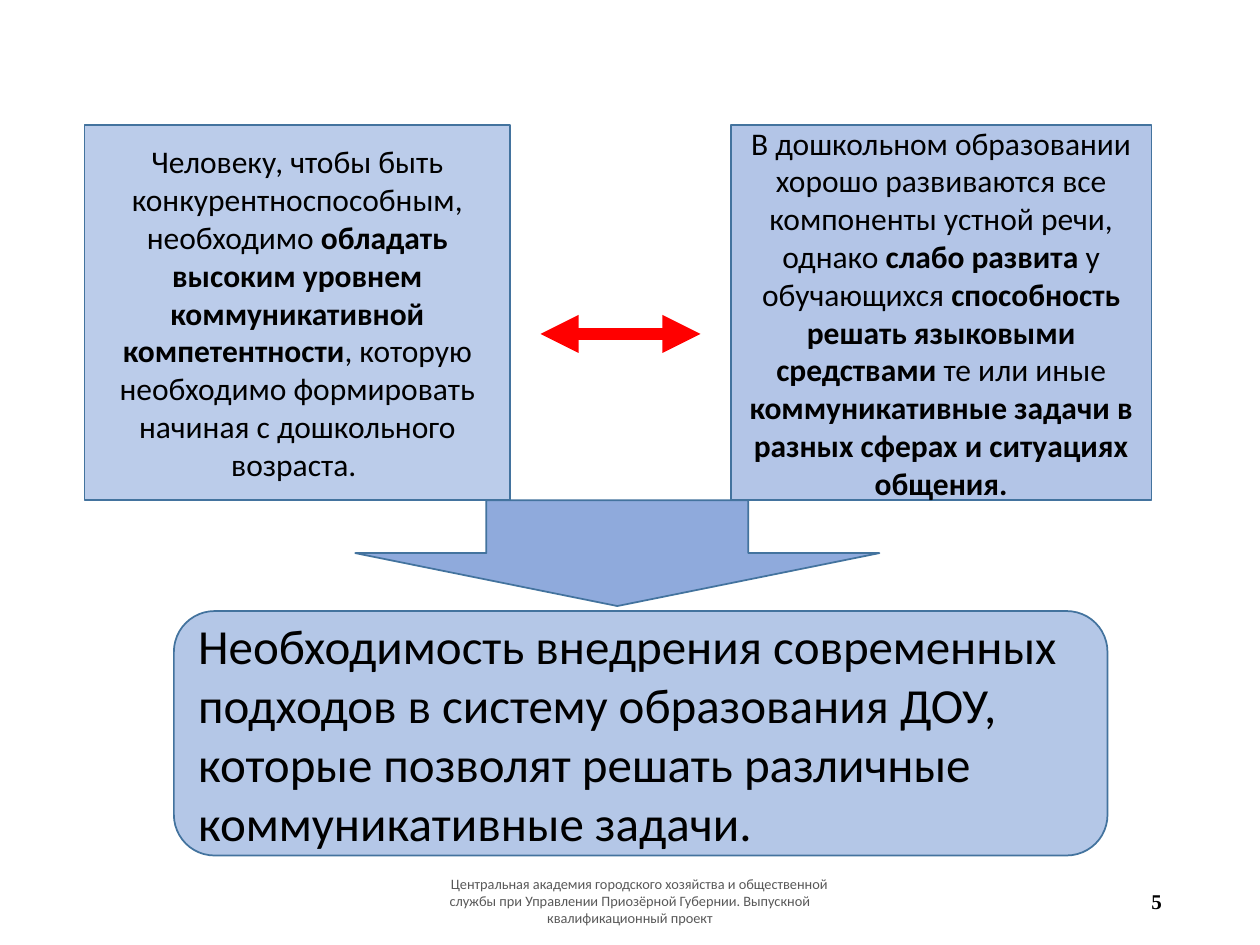
from dataclasses import dataclass

from lxml.etree import SubElement
from pptx import Presentation
from pptx.dml.color import RGBColor
from pptx.enum.shapes import MSO_CONNECTOR, MSO_SHAPE
from pptx.enum.text import MSO_ANCHOR, PP_ALIGN
from pptx.oxml.ns import qn
from pptx.util import Emu, Pt

SCALE = 9144  # EMU per px, 100 px to the inch
COLORS = {
    "blue": "8FAADC",
    "pale_blue": "B4C7E7",
    "outline": "43739E",
    "red": "FF0000",
    "black": "000000",
    "gray": "595959",
}


@dataclass
class TextFormat:
    size: float
    color: str = "black"
    font: str = "Calibri"
    bold: bool = False
    align: PP_ALIGN = PP_ALIGN.CENTER
    indent: int = 0


@dataclass
class Block:
    box: tuple[int, int, int, int]
    kind: MSO_SHAPE
    fill: str
    opacity: int = 100
    runs: tuple[str, ...] = ()  # regular and bold runs take turns
    text_format: TextFormat | None = None


@dataclass
class Label:
    box: tuple[int, int, int, int]
    text: str
    text_format: TextFormat


def px(value: int) -> Emu:
    return Emu(value * SCALE)


def rgb(name: str) -> RGBColor:
    return RGBColor.from_string(COLORS[name])


def write_text(shape, runs: tuple[str, ...], style: TextFormat) -> None:
    frame = shape.text_frame
    frame.word_wrap = True
    frame.vertical_anchor = MSO_ANCHOR.MIDDLE
    paragraph = frame.paragraphs[0]
    paragraph.alignment = style.align
    if style.indent:
        paragraph._p.get_or_add_pPr().set("indent", str(px(style.indent)))
    for index, text in enumerate(runs):
        run = paragraph.add_run()
        run.text = text
        values = {
            "name": style.font,
            "size": Pt(style.size),
            "bold": style.bold or index % 2 == 1,
        }
        for attribute, value in values.items():
            setattr(run.font, attribute, value)
        run.font.color.rgb = rgb(style.color)


def draw_block(slide, block: Block) -> None:
    shape = slide.shapes.add_shape(block.kind, *map(px, block.box))
    shape.shadow.inherit = False
    shape.fill.solid()
    shape.fill.fore_color.rgb = rgb(block.fill)
    if block.opacity < 100:
        color = shape._element.spPr.find(qn("a:solidFill"))[0]
        SubElement(color, qn("a:alpha")).set("val", str(block.opacity * 1000))
    shape.line.color.rgb = rgb("outline")
    shape.line.width = Pt(1)
    if block.text_format:
        write_text(shape, block.runs, block.text_format)


def draw_label(slide, label: Label) -> None:
    shape = slide.shapes.add_textbox(*map(px, label.box))
    write_text(shape, (label.text,), label.text_format)


def draw_double_arrow(slide, left: int, right: int, y: int) -> None:
    arrow = slide.shapes.add_connector(
        MSO_CONNECTOR.STRAIGHT, px(left), px(y), px(right), px(y)
    )
    arrow.line.color.rgb = rgb("red")
    arrow.line.width = Pt(7.25)
    line = arrow.line._get_or_add_ln()
    for end in ("a:headEnd", "a:tailEnd"):
        SubElement(line, qn(end)).set("type", "triangle")
    SubElement(arrow._element.spPr, qn("a:effectLst"))


BODY = TextFormat(18)
CONCLUSION = TextFormat(28, align=PP_ALIGN.LEFT)

LABELS = (
    Label(
        (331, 695, 338, 40),
        "Центральная академия городского хозяйства и общественной службы при "
        "Управлении Приозёрной Губернии. Выпускной квалификационный проект",
        TextFormat(8.2, "gray", indent=15),
    ),
    Label(
        (707, 695, 225, 40),
        "5",
        TextFormat(12, font="Times New Roman", bold=True, align=PP_ALIGN.RIGHT),
    ),
)

PREMISES = (
    Block(
        (67, 99, 338, 298), MSO_SHAPE.RECTANGLE, "blue", 60,
        (
            "Человеку, чтобы быть конкурентноспособным, необходимо ",
            "обладать высоким уровнем коммуникативной компетентности",
            ", которую необходимо формировать начиная с дошкольного возраста. ",
        ),
        BODY,
    ),
    Block(
        (580, 99, 334, 298), MSO_SHAPE.RECTANGLE, "blue", 68,
        (
            "В дошкольном образовании хорошо развиваются все компоненты "
            "устной речи, однако ",
            "слабо развита ",
            "у обучающихся ",
            "способность решать языковыми средствами ",
            "те или иные ",
            "коммуникативные задачи в разных сферах и ситуациях общения.",
        ),
        BODY,
    ),
)

OUTCOME = (
    Block(
        (138, 485, 741, 194), MSO_SHAPE.ROUNDED_RECTANGLE, "pale_blue",
        runs=(
            "Необходимость внедрения современных подходов в систему образования "
            "ДОУ, которые позволят решать различные коммуникативные задачи.",
        ),
        text_format=CONCLUSION,
    ),
    Block((282, 397, 416, 84), MSO_SHAPE.DOWN_ARROW, "blue"),
)


def main() -> None:
    presentation = Presentation()
    presentation.slide_width = px(1000)
    presentation.slide_height = px(750)
    slide = presentation.slides.add_slide(presentation.slide_layouts[6])

    # Footer and page number
    for label in LABELS:
        draw_label(slide, label)

    # Two opposed premises
    for block in PREMISES:
        draw_block(slide, block)
    draw_double_arrow(slide, 429, 556, 265)

    # Conclusion and the arrow leading to it
    for block in OUTCOME:
        draw_block(slide, block)

    presentation.save("out.pptx")


if __name__ == "__main__":
    main()
